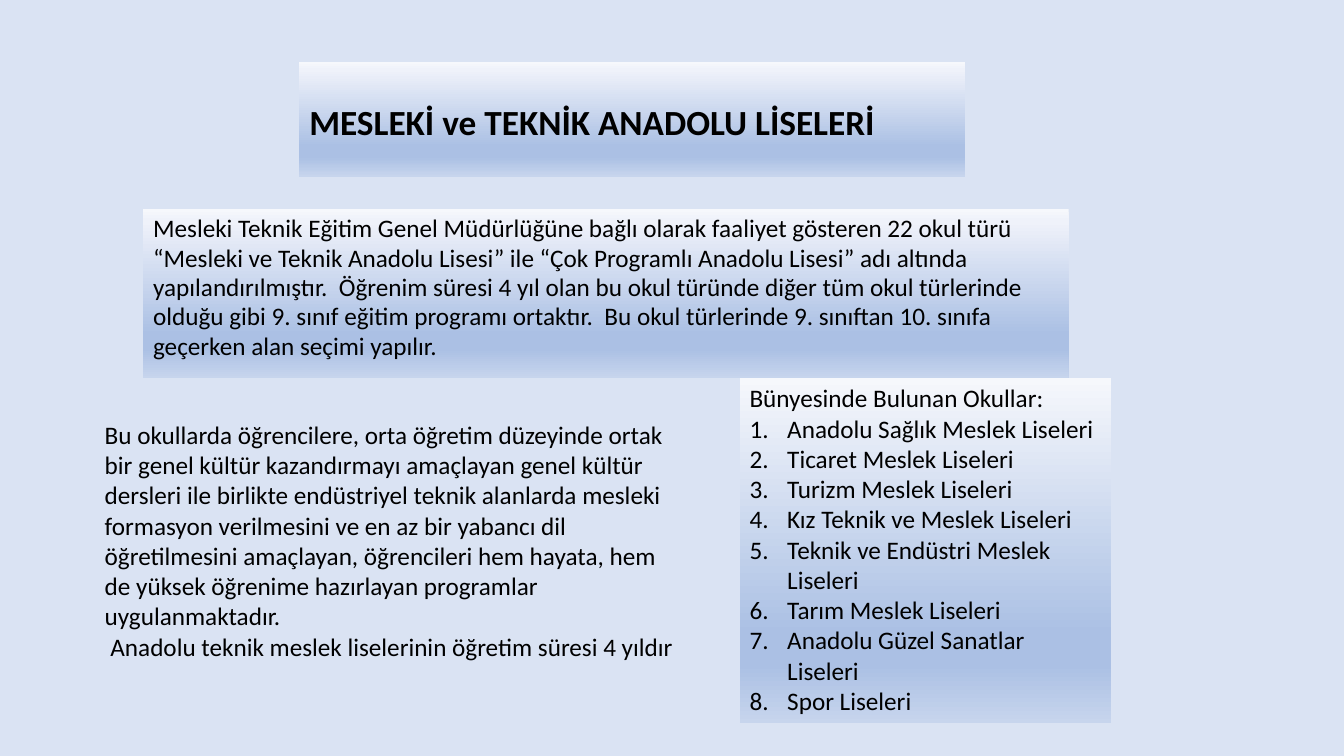
from dataclasses import dataclass

from lxml.etree import SubElement
from pptx import Presentation
from pptx.dml.color import RGBColor
from pptx.enum.shapes import MSO_SHAPE
from pptx.enum.text import MSO_ANCHOR, MSO_AUTO_SIZE, PP_ALIGN
from pptx.oxml.ns import qn
from pptx.util import Cm, Pt


@dataclass(frozen=True)
class Theme:
    font: str = "Calibri"
    background: str = "DAE3F3"
    ink: str = "000000"
    title_size: float = 25.2
    body_size: float = 18
    gradient: tuple = ((0, "F6F8FC"), (74, "ABC0E4"), (83, "ABC0E4"), (100, "C7D5ED"))
    soft_gradient: tuple = ((0, "F6F8FC"), (7, "EFF2FA"), (74, "ABC0E4"),
                            (83, "ABC0E4"), (100, "C7D5ED"))


@dataclass(frozen=True)
class Panel:
    """A block of text; the place is left, top, width and height in cm."""
    place: tuple
    lines: tuple
    numbered: tuple = ()
    gradient: tuple = ()
    spacing: float = 1.0


THEME = Theme()
TITLE_PLACE = (7.54, 1.55, 16.79, 2.9)
TITLE = "MESLEKİ ve TEKNİK ANADOLU LİSELERİ"
PANELS = (
    Panel(
        (3.61, 5.28, 23.32, 4.24),
        ("Mesleki Teknik Eğitim Genel Müdürlüğüne bağlı olarak faaliyet gösteren 22 okul türü "
         "“Mesleki ve Teknik Anadolu Lisesi” ile “Çok Programlı Anadolu Lisesi” adı altında "
         "yapılandırılmıştır.  Öğrenim süresi 4 yıl olan bu okul türünde diğer tüm okul "
         "türlerinde olduğu gibi 9. sınıf eğitim programı ortaktır.  Bu okul türlerinde "
         "9. sınıftan 10. sınıfa geçerken alan seçimi yapılır.",),
        gradient=THEME.soft_gradient, spacing=0.97),
    Panel(
        (18.64, 9.52, 9.37, 8.71),
        ("Bünyesinde Bulunan Okullar:",),
        numbered=("Anadolu Sağlık Meslek Liseleri", "Ticaret Meslek Liseleri",
                  "Turizm Meslek Liseleri", "Kız Teknik ve Meslek Liseleri",
                  "Teknik ve Endüstri Meslek Liseleri", "Tarım Meslek Liseleri",
                  "Anadolu Güzel Sanatlar Liseleri", "Spor Liseleri"),
        gradient=THEME.gradient),
    Panel(
        (2.39, 10.44, 14.88, 6.4),
        ("Bu okullarda öğrencilere, orta öğretim düzeyinde ortak bir genel kültür kazandırmayı "
         "amaçlayan genel kültür dersleri ile birlikte endüstriyel teknik alanlarda mesleki "
         "formasyon verilmesini ve en az bir yabancı dil öğretilmesini amaçlayan, öğrencileri "
         "hem hayata, hem de yüksek öğrenime hazırlayan programlar uygulanmaktadır.",
         " Anadolu teknik meslek liselerinin öğretim süresi 4 yıldır")),
)


def set_all(target, values: dict) -> None:
    for name, value in values.items():
        setattr(target, name, value)


def fill_gradient(shape, stops: tuple) -> None:
    """Fill the shape from top to bottom with any number of stops."""
    shape.fill.gradient()
    shape.fill.gradient_angle = 270
    stop_list = shape.fill._fill._gradFill.find(qn("a:gsLst"))
    for old_stop in list(stop_list):
        stop_list.remove(old_stop)
    for percent, colour in stops:
        stop = SubElement(stop_list, qn("a:gs"), pos=str(percent * 1000))
        SubElement(stop, qn("a:srgbClr"), val=colour)


def write(para, text: str, size: float, bold: bool = False, spacing: float = 1.0) -> None:
    set_all(para, {"alignment": PP_ALIGN.LEFT, "line_spacing": spacing})
    span = para.add_run()
    span.text = text
    set_all(span.font, {"name": THEME.font, "size": Pt(size), "bold": bold})
    span.font.color.rgb = RGBColor.from_string(THEME.ink)


def number(para) -> None:
    properties = para._p.get_or_add_pPr()
    indent = Cm(0.95)
    properties.set("marL", str(indent))
    properties.set("indent", str(-indent))
    SubElement(properties, qn("a:buFont"), typeface="+mj-lt")
    SubElement(properties, qn("a:buAutoNum"), type="arabicPeriod")


def draw_title(slide) -> None:
    title = slide.shapes.title
    set_all(title, dict(zip(("left", "top", "width", "height"), map(Cm, TITLE_PLACE))))
    fill_gradient(title, THEME.soft_gradient)
    set_all(title.text_frame, {"word_wrap": True, "auto_size": MSO_AUTO_SIZE.NONE,
                               "vertical_anchor": MSO_ANCHOR.MIDDLE, "margin_top": Cm(0.38)})
    write(title.text_frame.paragraphs[0], TITLE, THEME.title_size, bold=True, spacing=0.9)


def draw_panel(slide, panel: Panel) -> None:
    place = map(Cm, panel.place)
    if panel.gradient:
        box = slide.shapes.add_shape(MSO_SHAPE.RECTANGLE, *place)
        box.shadow.inherit = False
        box.line.fill.background()
        fill_gradient(box, panel.gradient)
    else:
        box = slide.shapes.add_textbox(*place)
    frame = box.text_frame
    set_all(frame, {"word_wrap": True, "auto_size": MSO_AUTO_SIZE.NONE,
                    "vertical_anchor": MSO_ANCHOR.TOP})
    for index, text in enumerate(panel.lines + panel.numbered):
        para = frame.add_paragraph() if index else frame.paragraphs[0]
        write(para, text, THEME.body_size, spacing=panel.spacing)
        if index >= len(panel.lines):
            number(para)


def main() -> None:
    deck = Presentation()
    set_all(deck, {"slide_width": Cm(33.87), "slide_height": Cm(19.05)})
    slide = deck.slides.add_slide(deck.slide_layouts.get_by_name("Title Only"))
    slide.background.fill.solid()
    slide.background.fill.fore_color.rgb = RGBColor.from_string(THEME.background)
    draw_title(slide)
    for panel in PANELS:
        draw_panel(slide, panel)
    deck.save("out.pptx")


if __name__ == "__main__":
    main()
